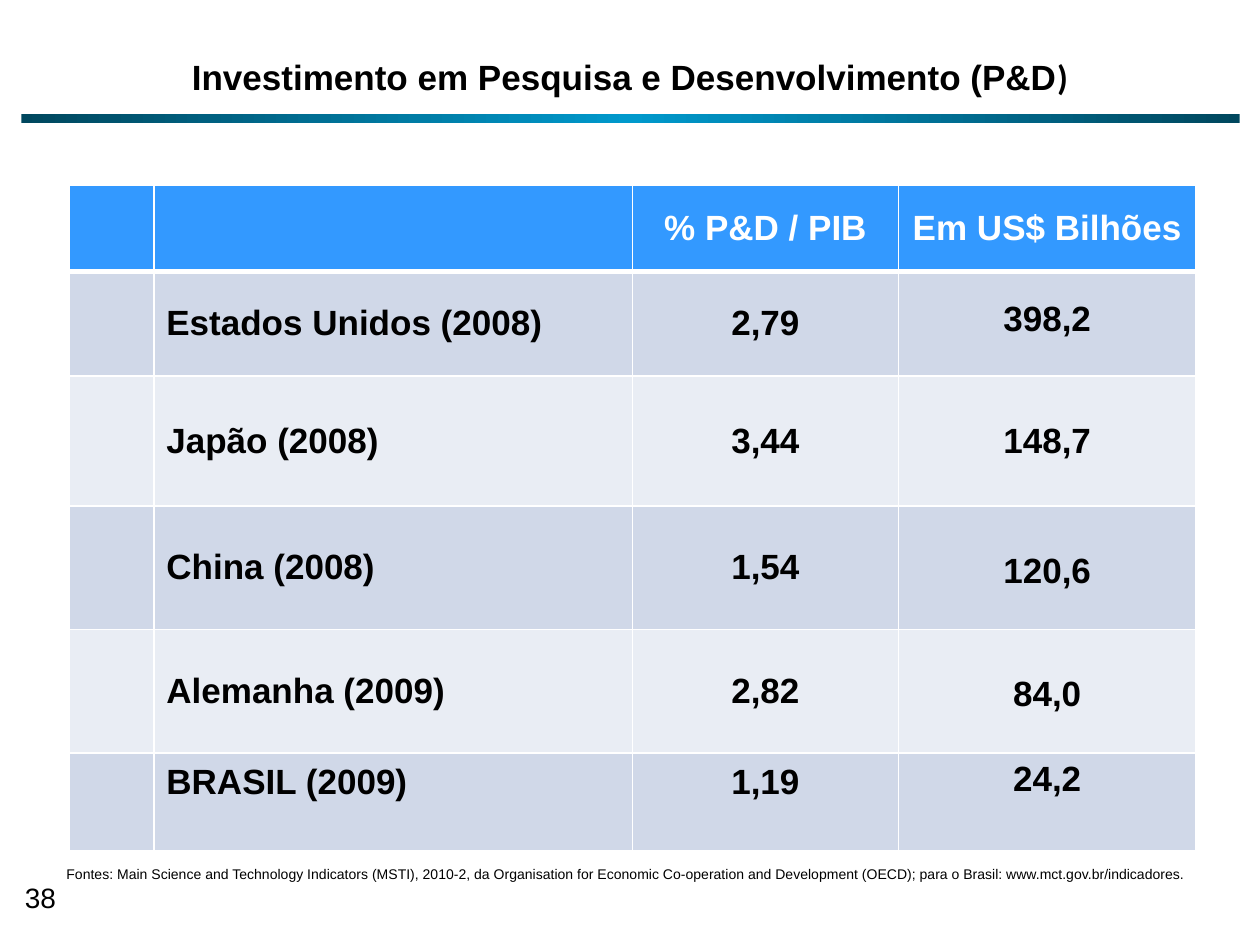
from copy import deepcopy

from lxml.etree import SubElement
from pptx import Presentation
from pptx.dml.color import RGBColor
from pptx.enum.shapes import MSO_SHAPE as Shape
from pptx.enum.text import MSO_ANCHOR as Anchor, PP_ALIGN as Align
from pptx.oxml.ns import qn
from pptx.util import Cm, Pt

BLACK, WHITE = "000000", "FFFFFF"
HEADER_FILL = "3399FF"
BAND_FILLS = ["D0D8E8", "E9EDF4"]
BAR_EDGE, BAR_MIDDLE = "00475E", "0099CC"

COLUMN_WIDTHS = [1.7, 9.65, 5.36, 6]
ROW_HEIGHTS = [1.73, 2.11, 2.62, 2.49, 2.49, 1.98]
HEADERS = ["", "", "% P&D / PIB", "Em US$ Bilhões"]
# Country, share of GDP, amount, top margin of the amount
COUNTRIES = [
    ("Estados Unidos (2008)", "2,79", "398,2", 0.57),
    ("Japão (2008)", "3,44", "148,7", 0.92),
    ("China (2008)", "1,54", "120,6", 0.92),
    ("Alemanha (2009)", "2,82", "84,0", 0.92),
    ("BRASIL (2009)", "1,19", "24,2", 0.13),
]
SOURCES = (
    "Fontes: Main Science and Technology Indicators (MSTI), 2010-2, da "
    "Organisation for Economic Co-operation and Development (OECD); "
    "para o Brasil: www.mct.gov.br/indicadores."
)


def color(hex_string):
    return RGBColor.from_string(hex_string)


def add_run(paragraph, text, size, hex_string=BLACK, bold=False, name="Arial"):
    run = paragraph.add_run()
    run.text = text
    run.font.size = Pt(size)
    run.font.name = name
    run.font.bold = bold
    run.font.color.rgb = color(hex_string)


def place(shape, left, top, width, height):
    shape.left, shape.top = Cm(left), Cm(top)
    shape.width, shape.height = Cm(width), Cm(height)


def add_title(slide):
    title = slide.shapes.title
    place(title, 0, 0.53, 25.4, 2.01)
    title.text_frame.vertical_anchor = Anchor.MIDDLE
    paragraph = title.text_frame.paragraphs[0]
    paragraph.alignment = Align.CENTER
    add_run(paragraph, "Investimento em Pesquisa e Desenvolvimento (P&D", 20, bold=True)
    add_run(paragraph, ")", 20, bold=True, name="Calibri")


def add_text(slide, text, size, left, top, width, height):
    box = slide.shapes.add_textbox(Cm(left), Cm(top), Cm(width), Cm(height))
    box.text_frame.word_wrap = True
    add_run(box.text_frame.paragraphs[0], text, size)


def add_gradient_bar(slide, left, top, width, height):
    bar = slide.shapes.add_shape(
        Shape.RECTANGLE, Cm(left), Cm(top), Cm(width), Cm(height))
    bar.shadow.inherit = False
    bar.line.fill.background()
    bar.fill.gradient()
    bar.fill.gradient_angle = 0
    # The default gradient has two stops; a third makes it symmetric
    stop_list = bar._element.spPr.find(qn("a:gradFill")).find(qn("a:gsLst"))
    stop_list.append(deepcopy(stop_list[0]))
    stops = [(0, BAR_EDGE), (0.5, BAR_MIDDLE), (1, BAR_EDGE)]
    for stop, (position, hex_string) in zip(bar.fill.gradient_stops, stops):
        stop.position = position
        stop.color.rgb = color(hex_string)


def set_borders(cell, top=1, bottom=1):
    properties = cell._tc.get_or_add_tcPr()
    for tag, width in [("lnL", 1), ("lnR", 1), ("lnT", top), ("lnB", bottom)]:
        line = SubElement(properties, qn(f"a:{tag}"), w=str(Pt(width)))
        fill = SubElement(line, qn("a:solidFill"))
        SubElement(fill, qn("a:srgbClr"), val=WHITE)


def format_cell(cell, text, fill, text_color, alignment):
    cell.fill.solid()
    cell.fill.fore_color.rgb = color(fill)
    cell.vertical_anchor = Anchor.MIDDLE
    if text:
        paragraph = cell.text_frame.paragraphs[0]
        paragraph.alignment = alignment
        add_run(paragraph, text, 20, text_color, bold=True)


def align_top(cell, margin):
    cell.vertical_anchor = Anchor.TOP
    cell.margin_top = Cm(margin)


def add_investment_table(slide, left, top):
    frame = slide.shapes.add_table(
        len(ROW_HEIGHTS), len(COLUMN_WIDTHS), Cm(left), Cm(top),
        Cm(sum(COLUMN_WIDTHS)), Cm(sum(ROW_HEIGHTS)))
    table = frame.table
    for column, width in zip(table.columns, COLUMN_WIDTHS):
        column.width = Cm(width)
    for row, height in zip(table.rows, ROW_HEIGHTS):
        row.height = Cm(height)

    # Header row with a thick rule below
    for index, header in enumerate(HEADERS):
        cell = table.cell(0, index)
        set_borders(cell, bottom=3)
        format_cell(cell, header, HEADER_FILL, WHITE, Align.CENTER)

    # Banded country rows
    for number, (country, share, amount, margin) in enumerate(COUNTRIES, start=1):
        fill = BAND_FILLS[(number - 1) % 2]
        for index, text in enumerate(["", country, share, amount]):
            cell = table.cell(number, index)
            set_borders(cell, top=3 if number == 1 else 1)
            alignment = Align.LEFT if index == 1 else Align.CENTER
            format_cell(cell, text, fill, BLACK, alignment)
        align_top(table.cell(number, 3), margin)

    # The last row sits near its upper edge
    for index in (1, 2):
        align_top(table.cell(len(COUNTRIES), index), 0.2)


def main():
    presentation = Presentation()
    presentation.slide_width, presentation.slide_height = Cm(25.4), Cm(19.05)
    slide = presentation.slides.add_slide(presentation.slide_layouts[5])

    add_title(slide)
    add_investment_table(slide, 1.4, 3.74)
    # Sources and page number
    add_text(slide, SOURCES, 8, 1.09, 17.32, 23.22, 0.6)
    add_text(slide, "38", 16, 0.25, 17.63, 1.45, 1.02)
    add_gradient_bar(slide, 0.43, 2.29, 24.56, 0.2)

    presentation.save("out.pptx")


if __name__ == "__main__":
    main()
